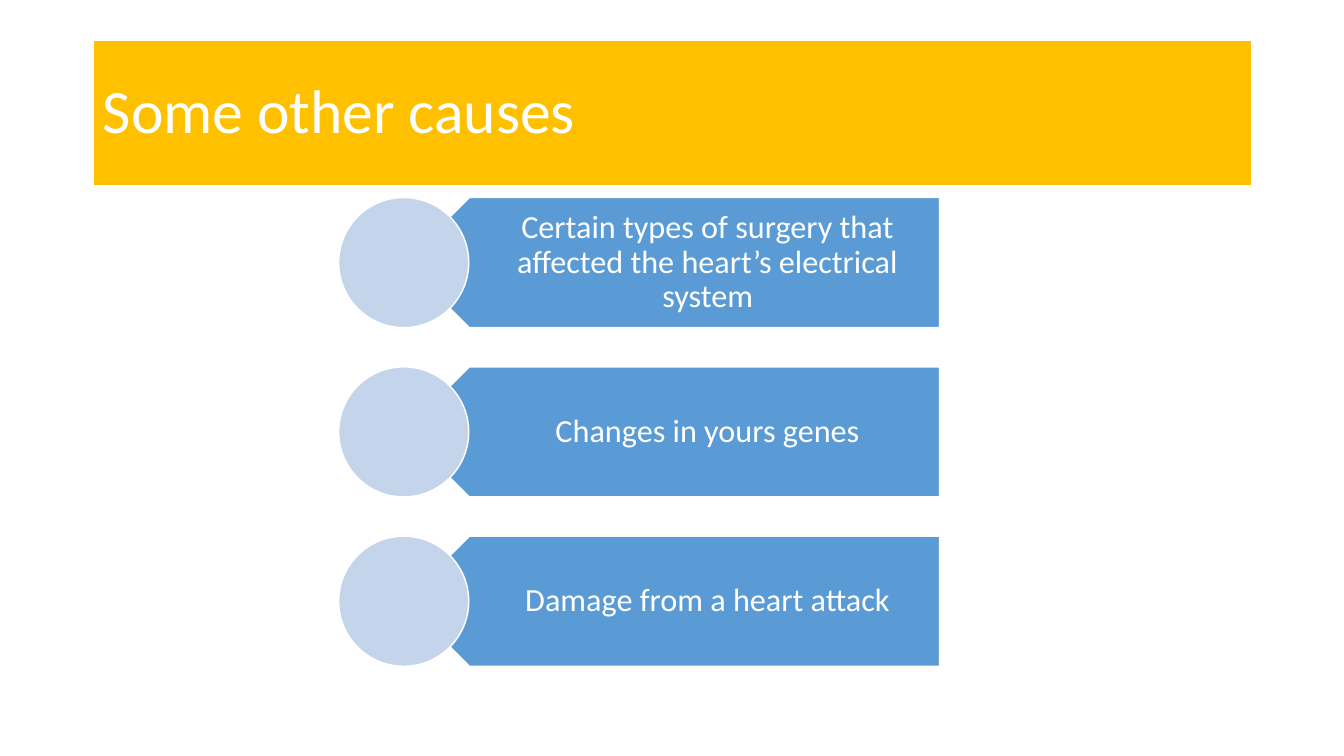
from pptx import Presentation
from pptx.dml.color import RGBColor
from pptx.enum.shapes import MSO_SHAPE
from pptx.enum.text import MSO_ANCHOR, MSO_AUTO_SIZE, PP_ALIGN
from pptx.util import Inches, Pt

PENTAGON, CIRCLE = MSO_SHAPE.PENTAGON, MSO_SHAPE.OVAL
MIDDLE, LEFT, CENTER = MSO_ANCHOR.MIDDLE, PP_ALIGN.LEFT, PP_ALIGN.CENTER
NO_AUTOFIT = MSO_AUTO_SIZE.NONE
TITLE_ONLY = 5

CAUSES = [
    "Certain types of surgery that affected the heart’s electrical system",
    "Changes in yours genes",
    "Damage from a heart attack",
]
FIRST_ROW, ROW_STEP, ROW_HEIGHT = 26.13, 22.4, 17.2


def color(value):
    return RGBColor.from_string(value)


def write(frame, text, size, align, insets=(0.1, 0.05, 0.1, 0.05), space_after=0):
    frame.word_wrap = True
    frame.auto_size = NO_AUTOFIT
    frame.vertical_anchor = MIDDLE
    (frame.margin_left, frame.margin_top,
     frame.margin_right, frame.margin_bottom) = map(Inches, insets)
    paragraph = frame.paragraphs[0]
    paragraph.alignment = align
    paragraph.line_spacing = 0.9
    paragraph.space_before = Pt(0)
    paragraph.space_after = Pt(space_after)
    run = paragraph.add_run()
    run.text = text
    run.font.name = "Calibri"
    run.font.size = Pt(size)
    run.font.color.rgb = color(SlideBuilder.WHITE)


class SlideBuilder:
    """Builds one slide with lengths in percent of the slide's size."""

    WHITE, GOLD, BLUE, PALE_BLUE = "FFFFFF", "FFC000", "5B9BD5", "C4D5EB"

    def __init__(self, presentation):
        self.width = presentation.slide_width
        self.height = presentation.slide_height
        self.slide = presentation.slides.add_slide(
            presentation.slide_layouts[TITLE_ONLY])

    def box(self, left, top, width, height):
        return (round(self.width * left / 100), round(self.height * top / 100),
                round(self.width * width / 100), round(self.height * height / 100))

    def paint(self, shape, fill, line_width):
        shape.fill.solid()
        shape.fill.fore_color.rgb = color(fill)
        shape.line.color.rgb = color(self.WHITE)
        shape.line.width = Pt(line_width)

    def title(self, text, *area):
        shape = self.slide.shapes.title
        shape.left, shape.top, shape.width, shape.height = self.box(*area)
        self.paint(shape, self.GOLD, 1.5)
        write(shape.text_frame, text, size=44, align=LEFT)

    def shape(self, kind, fill, *area, rotation=0):
        shape = self.slide.shapes.add_shape(kind, *self.box(*area))
        shape.shadow.inherit = False
        shape.rotation = rotation
        self.paint(shape, fill, 1)

    def label(self, text, *area):
        shape = self.slide.shapes.add_textbox(*self.box(*area))
        write(shape.text_frame, text, size=23, align=CENTER,
              insets=(0.57, 0.1, 0.18, 0.1), space_after=8)

    def cause(self, text, top):
        self.shape(PENTAGON, self.BLUE, 30.08, top, 39.83, ROW_HEIGHT, rotation=180)
        self.label(text, 32.48, top, 37.43, ROW_HEIGHT)
        self.shape(CIRCLE, self.PALE_BLUE, 25.2, top, 9.68, ROW_HEIGHT)


def main():
    presentation = Presentation()
    presentation.slide_width = Inches(13.33)
    presentation.slide_height = Inches(7.5)
    builder = SlideBuilder(presentation)
    builder.title("Some other causes", 6.9, 5.33, 86.27, 19.33)
    for row, text in enumerate(CAUSES):
        builder.cause(text, FIRST_ROW + row * ROW_STEP)
    presentation.save("out.pptx")


if __name__ == "__main__":
    main()
